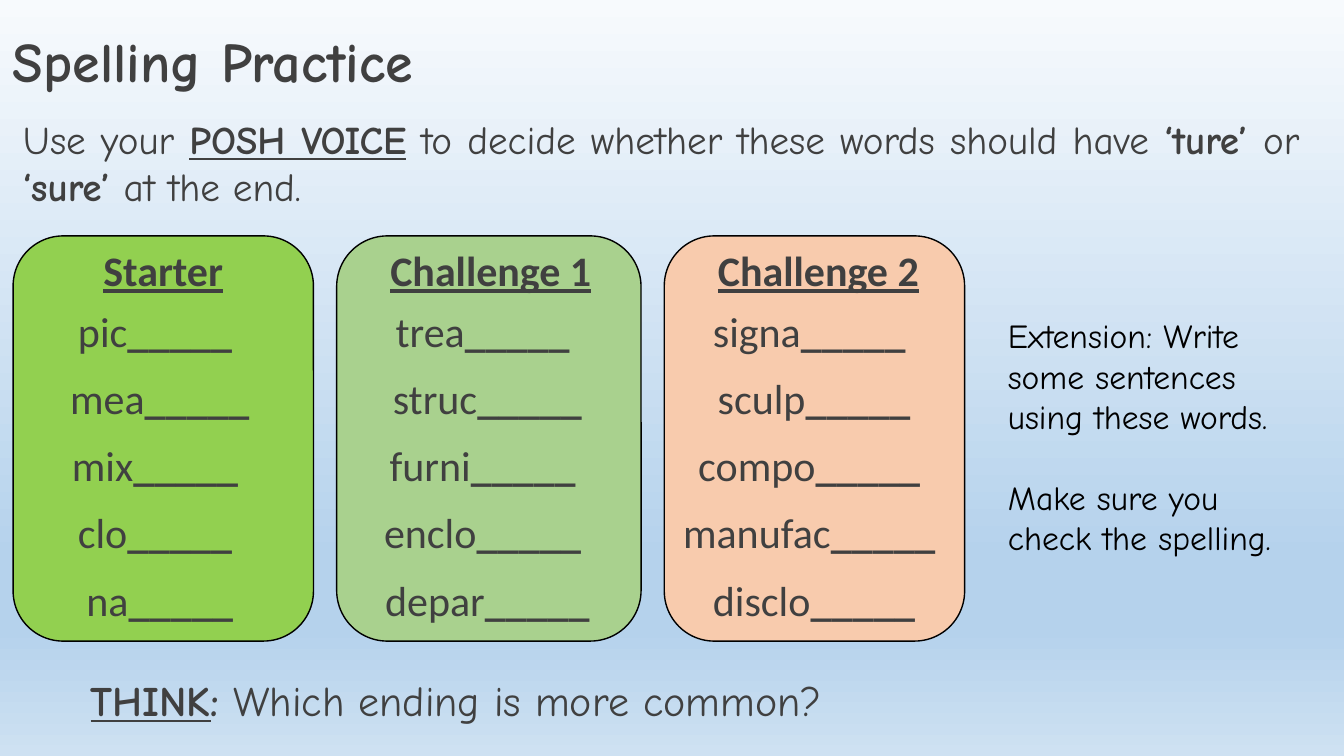
from dataclasses import dataclass

from lxml import etree
from pptx import Presentation
from pptx.dml.color import RGBColor
from pptx.enum.shapes import MSO_SHAPE
from pptx.enum.text import MSO_ANCHOR, PP_ALIGN
from pptx.oxml.ns import qn
from pptx.slide import Slide
from pptx.util import Inches, Pt

ROUNDED = MSO_SHAPE.ROUNDED_RECTANGLE
TOP, MIDDLE = MSO_ANCHOR.TOP, MSO_ANCHOR.MIDDLE
LEFT, CENTER, JUSTIFY = PP_ALIGN.LEFT, PP_ALIGN.CENTER, PP_ALIGN.JUSTIFY

SLIDE_WIDTH, SLIDE_HEIGHT = Inches(13.33), Inches(7.5)
COLUMN, ROW = SLIDE_WIDTH / 40, SLIDE_HEIGHT / 30
HAND_FONT, WORD_FONT = "Comic Neue", "Calibri"
BLANK_LAYOUT = 6
COLORS = {
    "text": "404040", "black": "000000", "starter": "92D050",
    "challenge_1": "A9D18E", "challenge_2": "F8CBAD",
}
BACKGROUND_STOPS = ((0, "F7FAFD"), (74, "B5D2EC"), (83, "B5D2EC"), (100, "CEE1F2"))


@dataclass(frozen=True)
class Area:
    """A rectangle in grid columns and rows."""
    left: float
    top: float
    width: float
    height: float

    def lengths(self) -> tuple[int, int, int, int]:
        """Return left, top, width and height as slide lengths."""
        return (round(self.left * COLUMN), round(self.top * ROW),
                round(self.width * COLUMN), round(self.height * ROW))


@dataclass(frozen=True)
class TextRun:
    """A stretch of text in one style."""
    text: str
    bold: bool = False
    underline: bool = False


@dataclass(frozen=True)
class TextStyle:
    """The look shared by all paragraphs of a text box."""
    size: float
    font: str = HAND_FONT
    color: str = "text"
    align: PP_ALIGN = LEFT
    anchor: MSO_ANCHOR = TOP
    line_spacing: float = 1.0
    before: float = 0
    after: float = 0
    wrap: bool = True


@dataclass(frozen=True)
class SpellingCard:
    """A coloured card with a heading and word stems to complete."""
    heading: str
    color: str
    left: float
    width: float
    heading_left: float
    heading_width: float
    words_left: float
    words_width: float
    stems: tuple[str, ...]


TITLE_STYLE = TextStyle(40, anchor=MIDDLE, line_spacing=0.9)
TASK_STYLE = TextStyle(28, align=JUSTIFY, before=5.6)
THINK_STYLE = TextStyle(30, align=CENTER, before=6)
HEADING_STYLE = TextStyle(30, WORD_FONT, align=CENTER, wrap=False)
WORDS_STYLE = TextStyle(30, WORD_FONT, align=CENTER, after=12)
EXTENSION_STYLE = TextStyle(24, color="black", after=29)

BLANKS = ("_____ ", "_____", "_____ ", "_____ ", "_____")
CARDS = (
    SpellingCard("Starter", "starter", 0.39, 8.94, 2.76, 4.2, 1.05, 7.41,
                 ("pic", "mea", "mix", "clo", "na")),
    SpellingCard("Challenge 1", "challenge_1", 10.02, 9.06, 11.28, 6.66, 10.8, 7.41,
                 ("trea", "struc", "furni", "enclo", "depar")),
    SpellingCard("Challenge 2", "challenge_2", 19.77, 8.94, 21.03, 6.66, 19.89, 8.67,
                 ("signa", "sculp", "compo", "manufac", "disclo")),
)


def rgb(name: str) -> RGBColor:
    """Look up a named colour."""
    return RGBColor.from_string(COLORS[name])


def paint_background(slide: Slide) -> None:
    """Fill the slide with a vertical gradient."""
    fill = slide.background.fill
    fill.gradient()
    fill.gradient_angle = 270
    stop_list = next(slide.element.iter(qn("a:gsLst")))
    for stop in list(stop_list):
        stop_list.remove(stop)
    for percent, color in BACKGROUND_STOPS:
        stop = etree.SubElement(stop_list, qn("a:gs"), pos=str(percent * 1000))
        etree.SubElement(stop, qn("a:srgbClr"), val=color)


def add_text(slide: Slide, area: Area, style: TextStyle, *lines: tuple[TextRun, ...]) -> None:
    """Add a text box with one paragraph for each line of runs."""
    frame = slide.shapes.add_textbox(*area.lengths()).text_frame
    frame.word_wrap = style.wrap
    frame.vertical_anchor = style.anchor
    for index, line in enumerate(lines):
        paragraph = frame.add_paragraph() if index else frame.paragraphs[0]
        paragraph.alignment = style.align
        paragraph.line_spacing = style.line_spacing
        paragraph.space_before = Pt(style.before)
        paragraph.space_after = Pt(style.after)
        for part in line:
            run = paragraph.add_run()
            run.text = part.text
            run.font.name = style.font
            run.font.size = Pt(style.size)
            run.font.color.rgb = rgb(style.color)
            run.font.bold = part.bold
            run.font.underline = part.underline


def add_card(slide: Slide, card: SpellingCard) -> None:
    """Draw a card with its heading and words."""
    area = Area(card.left, 9.36, card.width, 16.08)
    shape = slide.shapes.add_shape(ROUNDED, *area.lengths())
    shape.shadow.inherit = False
    shape.fill.solid()
    shape.fill.fore_color.rgb = rgb(card.color)
    shape.line.color.rgb = rgb("black")
    shape.line.width = Pt(1)
    add_text(slide, Area(card.heading_left, 9.52, card.heading_width, 2.44),
             HEADING_STYLE, (TextRun(card.heading, True, True),))
    words = [(TextRun(stem), TextRun(blank, True)) for stem, blank in zip(card.stems, BLANKS)]
    add_text(slide, Area(card.words_left, 11.92, card.words_width, 13.2), WORDS_STYLE, *words)


def main() -> None:
    """Build and save the spelling slide."""
    presentation = Presentation()
    presentation.slide_width, presentation.slide_height = SLIDE_WIDTH, SLIDE_HEIGHT
    slide = presentation.slides.add_slide(presentation.slide_layouts[BLANK_LAYOUT])
    paint_background(slide)
    add_text(slide, Area(0.09, 0.04, 27, 5), TITLE_STYLE, (TextRun("Spelling Practice", True),))
    add_text(slide, Area(0.39, 4.36, 38.58, 6.4), TASK_STYLE, (
        TextRun("Use your "), TextRun("POSH VOICE", True, True),
        TextRun(" to decide whether these words should have "),
        TextRun("‘ture’ ", True), TextRun("or "),
        TextRun("‘sure’ ", True), TextRun("at the end."),
    ))
    add_text(slide, Area(-0.39, 26.56, 27.93, 3.2), THINK_STYLE, (
        TextRun("THINK", True, True), TextRun(":", True),
        TextRun(" Which ending is more common?"),
    ))
    for card in CARDS:
        add_card(slide, card)
    add_text(slide, Area(29.7, 12.32, 8.76, 13.32), EXTENSION_STYLE,
             (TextRun("Extension: Write some sentences using these words."),),
             (TextRun("Make sure you check the spelling."),))
    presentation.save("out.pptx")


if __name__ == "__main__":
    main()
